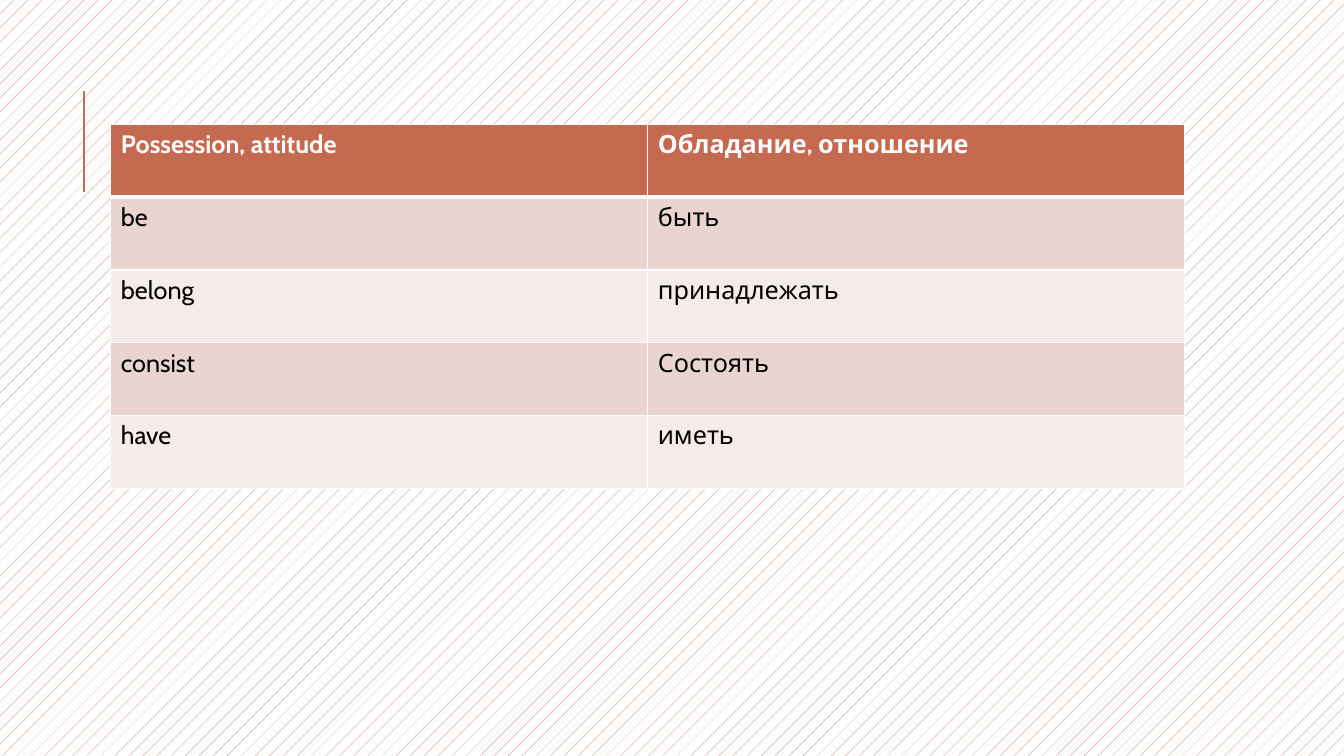
"""Build a slide with a bilingual table of verbs of possession and attitude."""
from lxml import etree
from pptx import Presentation
from pptx.dml.color import RGBColor
from pptx.enum import dml, shapes
from pptx.oxml import ns
from pptx.util import Pt


def color(value):
    return RGBColor.from_string(value)


def add_border(cell, side, width):
    border = etree.SubElement(cell._tc.get_or_add_tcPr(), ns.qn(f"a:{side}"), w=str(Pt(width)))
    fill = etree.SubElement(border, ns.qn("a:solidFill"))
    etree.SubElement(fill, ns.qn("a:srgbClr"), val="FFFFFF")


TERRACOTTA = "C66951"
BANDS = ["F5EBE9", "EAD4D0"]
VERBS = [
    ("Possession, attitude", "Обладание, отношение"),
    ("be", "быть"),
    ("belong", "принадлежать"),
    ("consist", "Состоять"),
    ("have", "иметь"),
]

prs = Presentation()
prs.slide_width, prs.slide_height = Pt(960), Pt(540)
slide = prs.slides.add_slide(prs.slide_layouts[6])

backdrop = slide.background.fill
backdrop.patterned()
backdrop.pattern = dml.MSO_PATTERN.PERCENT_5
backdrop.fore_color.rgb = color(TERRACOTTA)
backdrop.back_color.rgb = color("FFFFFF")

accent = slide.shapes.add_connector(
    shapes.MSO_CONNECTOR.STRAIGHT, Pt(60), Pt(136.8), Pt(60), Pt(64.8))
accent.line.color.rgb = color(TERRACOTTA)
accent.line.width = Pt(1.5)
etree.SubElement(accent._element.spPr, ns.qn("a:effectLst"))

verb_table = slide.shapes.add_table(
    len(VERBS), 2, Pt(79.2), Pt(88.9), Pt(767), Pt(260)).table

for row, pair in enumerate(VERBS):
    header = row == 0
    for column, word in enumerate(pair):
        cell = verb_table.cell(row, column)
        cell.text = word
        font = cell.text_frame.paragraphs[0].font
        font.name, font.size, font.bold = "Cabin", Pt(18), header
        font.color.rgb = color("FFFFFF" if header else "000000")
        for side in ("lnL", "lnR", "lnT", "lnB"):
            thick = (side == "lnB" and header) or (side == "lnT" and row == 1)
            add_border(cell, side, 3 if thick else 1)
        cell.fill.solid()
        cell.fill.fore_color.rgb = color(TERRACOTTA if header else BANDS[row % 2])

prs.save("out.pptx")
